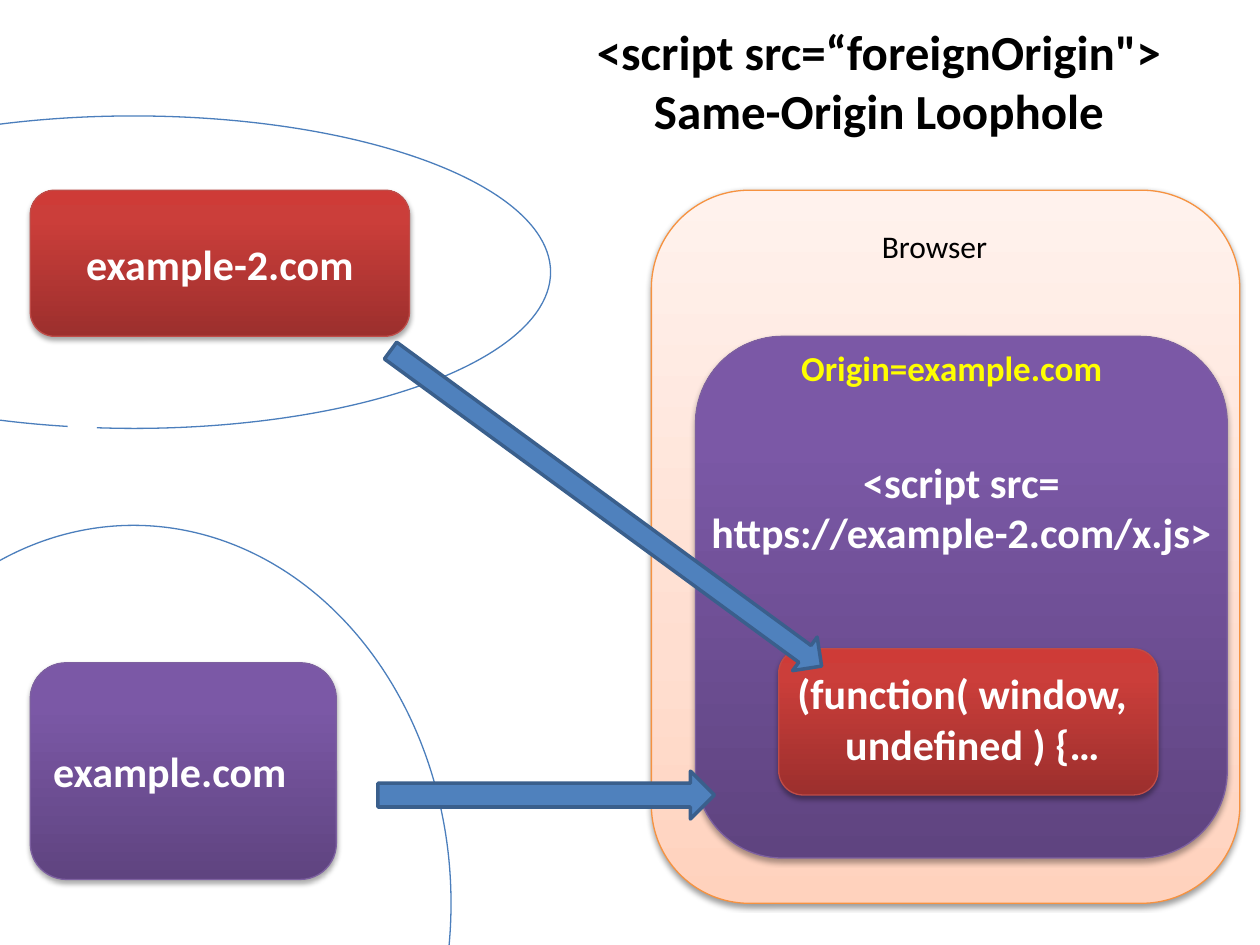
import copy
from dataclasses import dataclass

import pptx
import pptx.dml.color
import pptx.enum.shapes
import pptx.enum.text
import pptx.oxml
import pptx.oxml.ns
import pptx.util

Inches = pptx.util.Inches
Pt = pptx.util.Pt
RGBColor = pptx.dml.color.RGBColor
Preset = pptx.enum.shapes.MSO_SHAPE
Align = pptx.enum.text.PP_ALIGN
Anchor = pptx.enum.text.MSO_ANCHOR
qn = pptx.oxml.ns.qn

FONT = "Calibri"
WHITE = RGBColor(0xFF, 0xFF, 0xFF)
BLACK = RGBColor(0x00, 0x00, 0x00)
YELLOW = RGBColor(0xFF, 0xFF, 0x00)
ARC_BLUE = RGBColor(0x4B, 0x7E, 0xBC)
ARROW_FILL = RGBColor(0x4F, 0x81, 0xBD)
ARROW_LINE = RGBColor(0x3A, 0x5F, 0x8C)


@dataclass(frozen=True)
class Style:
    stops: tuple[tuple[float, RGBColor], ...]
    line: RGBColor
    shadow_alpha: int
    shadow_distance: float


@dataclass(frozen=True)
class Panel:
    bounds: tuple[float, float, float, float]
    style: Style
    text: str = ""
    align: Align = Align.LEFT


@dataclass(frozen=True)
class Label:
    bounds: tuple[float, float, float, float]
    text: str
    size: int
    color: RGBColor = WHITE
    bold: bool = True
    align: Align = Align.LEFT
    wrap: bool = False
    last_indent: float = 0


@dataclass(frozen=True)
class Arc:
    bounds: tuple[float, float, float, float]
    start: float
    end: float


@dataclass(frozen=True)
class Arrow:
    bounds: tuple[float, float, float, float]
    rotation: float = 0


ORANGE = Style(
    ((0, RGBColor(0xFF, 0xD2, 0xBD)), (0.35, RGBColor(0xFF, 0xDE, 0xD0)),
     (1, RGBColor(0xFF, 0xF2, 0xED))),
    RGBColor(0xF6, 0x92, 0x40), 38, 1.6)
PURPLE = Style(
    ((0, RGBColor(0x5F, 0x44, 0x80)), (0.8, RGBColor(0x7B, 0x58, 0xA6)),
     (1, RGBColor(0x7C, 0x57, 0xA8))),
    RGBColor(0x7D, 0x60, 0xA0), 35, 1.8)
RED = Style(
    ((0, RGBColor(0x9C, 0x2F, 0x2D)), (0.8, RGBColor(0xCB, 0x3E, 0x3A)),
     (1, RGBColor(0xCE, 0x3B, 0x37))),
    RGBColor(0xBF, 0x4C, 0x48), 35, 1.8)

# Back to front
ELEMENTS = (
    Panel((5.17, 1.51, 4.67, 5.66), ORANGE),
    Panel((0.24, 5.26, 2.43, 1.72), PURPLE, "example.com"),
    Panel((5.52, 2.67, 4.22, 4.14), PURPLE),
    Label((6.9, 1.75, 1.04, 0.4), "Browser", 18, BLACK, bold=False),
    Arc((-1.46, 4.17, 5.04, 6), 138.42, 22.14),
    Arc((-2.25, 0.92, 6.62, 2.48), 113.12, 103.22),
    Panel((0.24, 1.51, 3.01, 1.16), RED, "example-2.com", Align.CENTER),
    Arrow((3, 6.12, 2.67, 0.38)),
    Label((6.26, 2.7, 2.61, 0.44), "Origin=example.com", 20, YELLOW),
    Label((5.52, 3.57, 4.22, 0.91),
          "<script src=\nhttps://example-2.com/x.js>", 24, align=Align.CENTER),
    Panel((6.18, 5.15, 3.01, 1.16), RED),
    Arrow((2.69, 3.87, 4.24, 0.33), 36.2),
    Label((6.23, 5.25, 2.92, 1.21), "(function( window,\nundefined ) {…", 24,
          wrap=True, last_indent=0.38),
)


def format_text(frame, size: int, color: RGBColor, bold: bool, align: Align) -> None:
    for paragraph in frame.paragraphs:
        paragraph.alignment = align
        for span in paragraph.runs:
            span.font.name = FONT
            span.font.size = Pt(size)
            span.font.bold = bold
            span.font.color.rgb = color


def add_preset(page, preset: Preset, bounds, line: RGBColor, width: float):
    shape = page.shapes.add_shape(preset, *map(Inches, bounds))
    shape.shadow.inherit = False
    shape.line.color.rgb = line
    shape.line.width = Pt(width)
    return shape


def fill_gradient(shape, stops) -> None:
    """Fill from bottom to top with three stops."""
    shape.fill.gradient()
    shape.fill.gradient_angle = 90
    stop_list = shape.element.spPr.find(".//" + qn("a:gsLst"))
    stop_list.append(copy.deepcopy(stop_list[-1]))
    for stop, (position, color) in zip(shape.fill.gradient_stops, stops):
        stop.position = position
        stop.color.rgb = color


def cast_shadow(shape, style: Style) -> None:
    effects = shape.element.spPr.find(qn("a:effectLst"))
    effects.append(pptx.oxml.parse_xml(
        f'<a:outerShdw {pptx.oxml.ns.nsdecls("a")} blurRad="{Pt(3.1)}" '
        f'dist="{Pt(style.shadow_distance)}" dir="5400000" rotWithShape="0">'
        f'<a:srgbClr val="000000"><a:alpha val="{style.shadow_alpha * 1000}"/>'
        '</a:srgbClr></a:outerShdw>'))


def add_panel(page, panel: Panel) -> None:
    shape = add_preset(page, Preset.ROUNDED_RECTANGLE, panel.bounds, panel.style.line, 0.75)
    fill_gradient(shape, panel.style.stops)
    cast_shadow(shape, panel.style)
    if panel.text:
        shape.text_frame.text = panel.text
        shape.text_frame.vertical_anchor = Anchor.MIDDLE
        format_text(shape.text_frame, 24, WHITE, True, panel.align)


def add_label(page, label: Label) -> None:
    box = page.shapes.add_textbox(*map(Inches, label.bounds))
    frame = box.text_frame
    frame.word_wrap = label.wrap
    frame.text = label.text
    format_text(frame, label.size, label.color, label.bold, label.align)
    if label.last_indent:
        properties = frame.paragraphs[-1]._p.get_or_add_pPr()
        properties.set("marL", str(Inches(label.last_indent)))


def add_arc(page, arc: Arc) -> None:
    shape = add_preset(page, Preset.ARC, arc.bounds, ARC_BLUE, 0.75)
    shape.fill.background()
    # Angles are stored in 60000ths of a degree, adjustments in 100000ths
    for index, angle in enumerate((arc.start, arc.end)):
        shape.adjustments[index] = angle * 0.6


def add_arrow(page, arrow: Arrow) -> None:
    shape = add_preset(page, Preset.RIGHT_ARROW, arrow.bounds, ARROW_LINE, 2)
    shape.fill.solid()
    shape.fill.fore_color.rgb = ARROW_FILL
    shape.rotation = arrow.rotation


def set_title(page) -> None:
    title = page.shapes.title
    title.left, title.top, title.width, title.height = map(Inches, (4.61, 0.12, 4.73, 1.04))
    frame = title.text_frame
    frame.word_wrap = False
    frame.auto_size = pptx.enum.text.MSO_AUTO_SIZE.NONE
    frame.vertical_anchor = Anchor.TOP
    frame.text = "<script src=“foreignOrigin\">\nSame-Origin Loophole"
    format_text(frame, 28, BLACK, True, Align.CENTER)


def main() -> None:
    deck = pptx.Presentation()
    deck.slide_width, deck.slide_height = Inches(10), Inches(7.5)
    page = deck.slides.add_slide(deck.slide_layouts[5])
    set_title(page)
    draw = {Panel: add_panel, Label: add_label, Arc: add_arc, Arrow: add_arrow}
    for element in ELEMENTS:
        draw[type(element)](page, element)
    deck.save("out.pptx")


if __name__ == "__main__":
    main()
